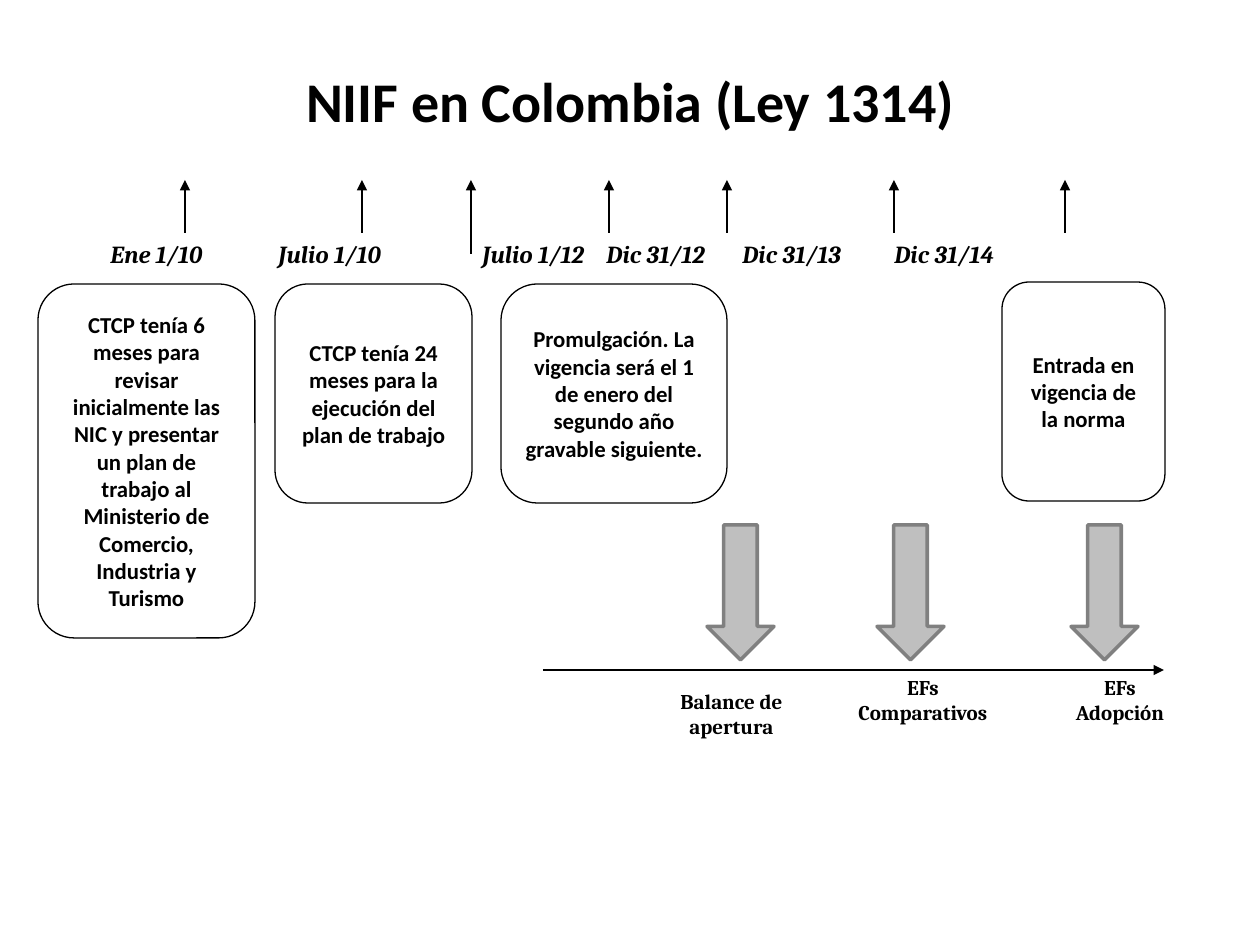
import pptx
import pptx.util
import pptx.dml.color
import pptx.enum.shapes
import pptx.enum.text
import pptx.oxml
import pptx.oxml.ns
from dataclasses import dataclass
from lxml import etree

SHAPE = pptx.enum.shapes.MSO_SHAPE
ALIGN = pptx.enum.text.PP_ALIGN
ANCHOR = pptx.enum.text.MSO_ANCHOR
qn = pptx.oxml.ns.qn


@dataclass(frozen=True)
class Theme:
    black: str = "000000"
    white: str = "FFFFFF"
    arrow_fill: str = "BFBFBF"
    arrow_line: str = "808080"
    body_font: str = "Calibri"
    date_font: str = "Cambria"
    title_size: int = 32
    date_size: int = 14
    card_size: int = 13
    label_size: int = 12
    thin: float = 0.75
    thick: float = 2


THEME = Theme()


def px(length):
    return pptx.util.Emu(round(length * 914400 / 126))


def rgb(value):
    return pptx.dml.color.RGBColor.from_string(value)


def style_para(para, font, size, italic=False, align=ALIGN.CENTER):
    para.alignment = align
    para.font.name = font
    para.font.size = pptx.util.Pt(size)
    para.font.bold = True
    para.font.italic = italic
    para.font.color.rgb = rgb(THEME.black)


def add_block(page, kind, box, fill, line=None, width=THEME.thin):
    block = page.shapes.add_shape(kind, *map(px, box))
    block.shadow.inherit = False
    block.fill.solid()
    block.fill.fore_color.rgb = rgb(fill)
    if line:
        block.line.color.rgb = rgb(line)
        block.line.width = pptx.util.Pt(width)
    else:
        block.line.fill.background()
    return block


def add_arrow(page, start, end):
    arrow = page.shapes.add_connector(
        pptx.enum.shapes.MSO_CONNECTOR.STRAIGHT, *map(px, start + end))
    arrow.line.color.rgb = rgb(THEME.black)
    arrow.line.width = pptx.util.Pt(THEME.thin)
    etree.SubElement(arrow.line._get_or_add_ln(), qn("a:tailEnd"), type="triangle")
    etree.SubElement(arrow._element.spPr, qn("a:effectLst"))


def add_title(page, box, text):
    title = page.shapes.add_textbox(*map(px, box)).text_frame
    title.word_wrap = True
    title.vertical_anchor = ANCHOR.MIDDLE
    title.text = text
    style_para(title.paragraphs[0], THEME.body_font, THEME.title_size)


def add_card(page, box, text):
    card = add_block(page, SHAPE.ROUNDED_RECTANGLE, box, THEME.white, THEME.black)
    frame = card.text_frame
    frame.word_wrap = True
    frame.vertical_anchor = ANCHOR.MIDDLE
    frame.text = text
    style_para(frame.paragraphs[0], THEME.body_font, THEME.card_size)


def add_up_arrows(page, box, offsets):
    left, top, _, height = box
    for offset in offsets:
        x = left + offset
        add_arrow(page, (x, top + height), (x, top))


def add_dates(page, box, dates, stops):
    frame = add_block(page, SHAPE.RECTANGLE, box, THEME.white).text_frame
    frame.word_wrap = True
    frame.vertical_anchor = ANCHOR.TOP
    para = frame.paragraphs[0]
    para.text = "\t".join(dates)
    # One tab stop per date after the first
    tabs = etree.SubElement(para._p.get_or_add_pPr(), qn("a:tabLst"))
    for stop in stops:
        etree.SubElement(tabs, qn("a:tab"), pos=str(px(stop)), algn="l")
    style_para(para, THEME.date_font, THEME.date_size, True, ALIGN.LEFT)


def add_label(page, box, lines):
    frame = page.shapes.add_textbox(*map(px, box)).text_frame
    frame.word_wrap = False
    frame.text = "\n".join(lines)
    for para in frame.paragraphs:
        style_para(para, THEME.date_font, THEME.label_size)


def add_statements(page, box, steps):
    """Timeline axis with a block arrow above and a label below each step."""
    left, top, width, height = box
    axis = top + 145
    add_arrow(page, (left, axis), (left + width, axis))
    for arrow_x, label_x, label_y, label_width, lines in steps:
        add_block(page, SHAPE.DOWN_ARROW, (left + arrow_x, top, 67, 135),
                  THEME.arrow_fill, THEME.arrow_line, THEME.thick)
        label_top = axis + label_y
        add_label(page, (left + label_x, label_top, label_width,
                         top + height - label_top), lines)


def build_page(deck):
    page = deck.slides.add_slide(deck.slide_layouts[6])
    add_title(page, (74, 37, 1113, 126), "NIIF en Colombia (Ley 1314)")

    # Dates and their markers; the third marker reaches past the date strip
    add_up_arrows(page, (185, 180, 880, 74), [0, 177, 424, 542, 709, 880])
    add_dates(page, (98, 233, 1142, 33),
              ["Ene 1/10", "Julio 1/10", "Julio 1/12", "Dic 31/12",
               "Dic 31/13", "Dic 31/14"],
              [168, 372, 496, 632, 784])
    add_up_arrows(page, (471, 180, 0, 74), [0])

    # Milestone cards
    cards = [
        ((38, 284, 217, 354),
         "CTCP tenía 6 meses para revisar inicialmente las NIC y presentar "
         "un plan de trabajo al Ministerio de Comercio, Industria y Turismo"),
        ((275, 284, 197, 219),
         "CTCP tenía 24 meses para la ejecución del plan de trabajo"),
        ((501, 284, 226, 219),
         "Promulgación. La vigencia será el 1 de enero del segundo año "
         "gravable siguiente."),
        ((1002, 282, 163, 219), "Entrada en vigencia de la norma"),
    ]
    for box, text in cards:
        add_card(page, box, text)

    # Financial statements
    add_statements(page, (543, 525, 621, 220), [
        (164, 114, 12, 149, ["Balance de", "apertura"]),
        (334, 291, -2, 178, ["EFs", "Comparativos"]),
        (528, 512, -2, 130, ["EFs", "Adopción"]),
    ])


def main():
    deck = pptx.Presentation()
    deck.slide_width, deck.slide_height = px(1260), px(945)
    build_page(deck)
    deck.save("out.pptx")


if __name__ == "__main__":
    main()
